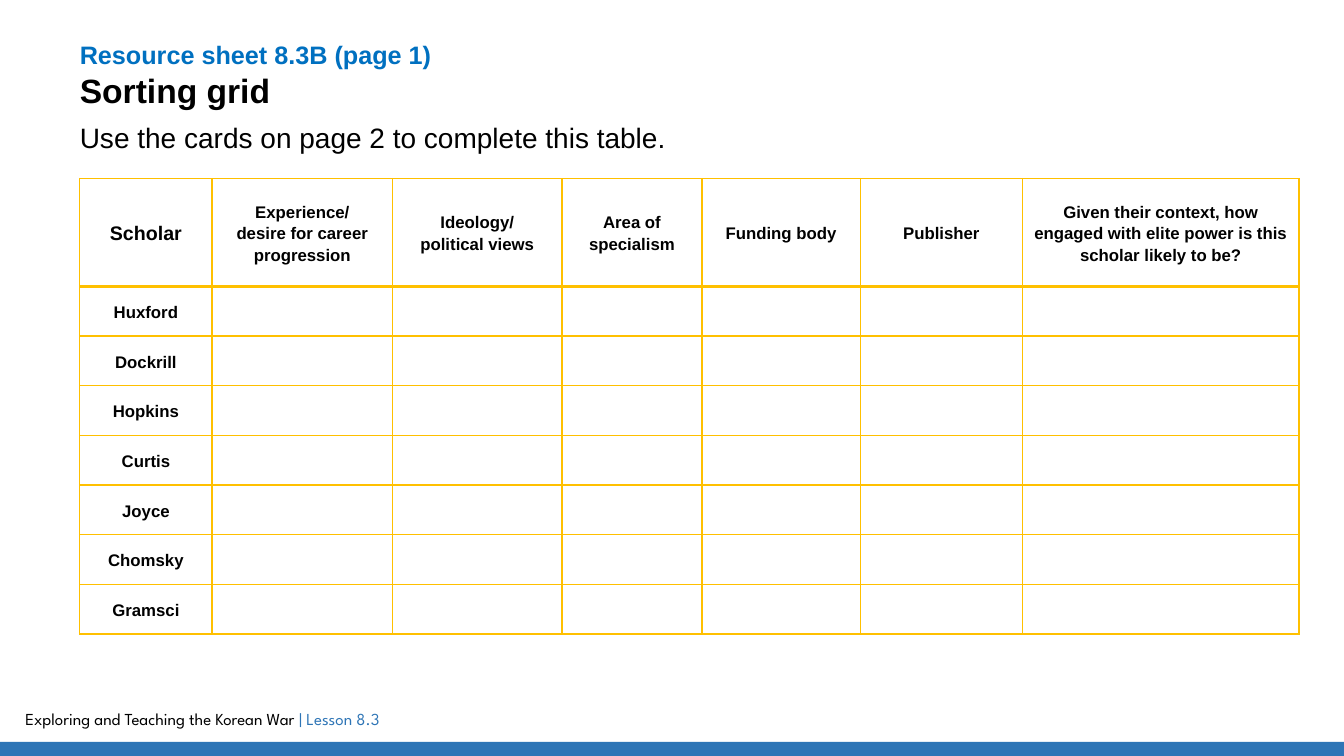
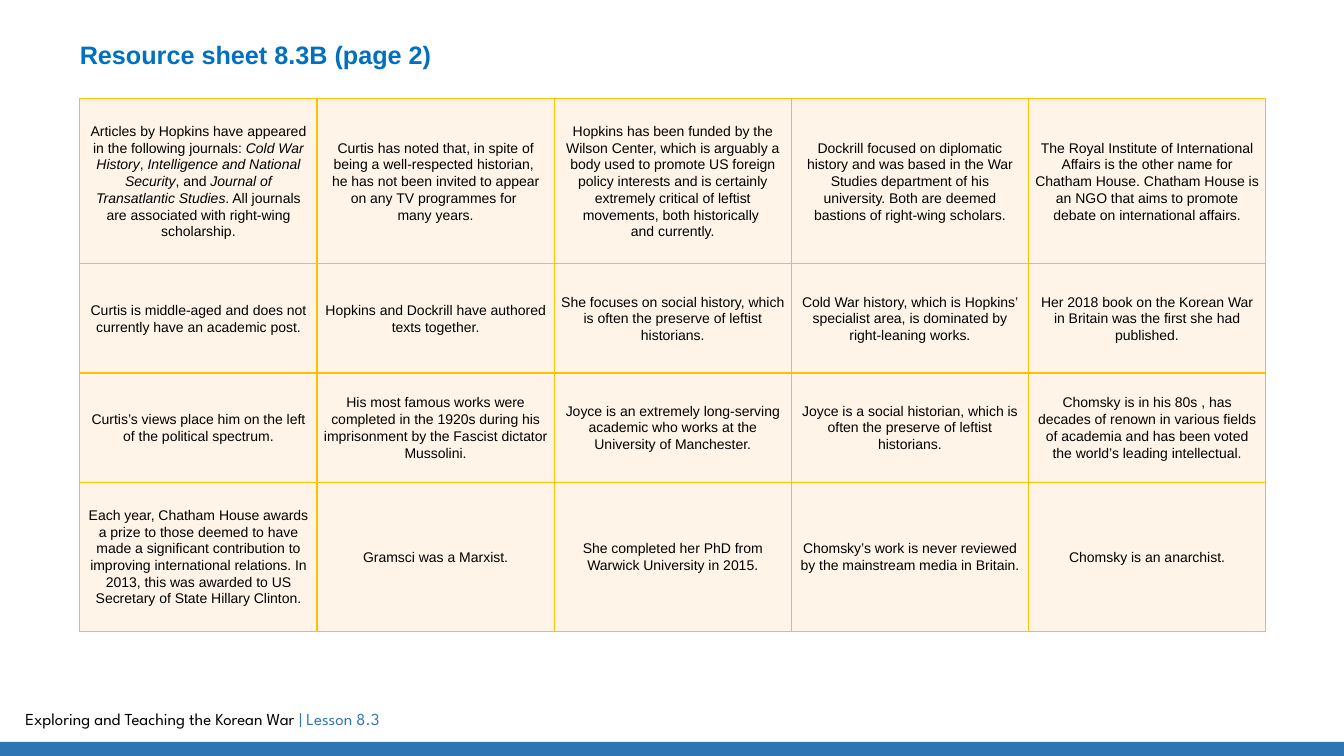
import pptx
import pptx.dml.color
import pptx.enum.shapes
import pptx.enum.text
import pptx.oxml
import pptx.oxml.ns
import pptx.util

Pt = pptx.util.Pt
ALIGN = pptx.enum.text.PP_ALIGN
ANCHOR = pptx.enum.text.MSO_ANCHOR

BLUE, BAND, BLACK, GOLD, CREAM = "0070C0", "2E75B6", "000000", "FFC000", "FFF4E7"
WIDTH, HEIGHT, MARGIN = 960, 540, 57

SHEET = {"name": "Arial", "size": 18, "bold": True, "color": BLUE}
HEADING = {**SHEET, "size": 24, "color": BLACK}
INTRO = {"name": "Arial", "size": 20, "bold": False, "color": BLACK}
LABEL = {**INTRO, "size": 12, "bold": True}
CORNER = {**LABEL, "size": 14}
CARD = {**INTRO, "size": 10}
FOOTER = {**INTRO, "name": "League Spartan", "size": 12}

GRID_COLUMNS = [94.5, 129, 121, 100, 113, 116, 197.5]
GRID_ROWS = [77] + [35.5] * 7
GRID_HEADERS = [
    "Scholar",
    "Experience/\ndesire for career progression",
    "Ideology/\npolitical views",
    "Area of specialism",
    "Funding body",
    "Publisher",
    "Given their context, how engaged with elite power is this scholar likely to be?",
]
SCHOLARS = ["Huxford", "Dockrill", "Hopkins", "Curtis", "Joyce", "Chomsky", "Gramsci"]

CARD_COLUMNS = [169.4] * 5
CARD_ROWS = [118, 78, 78, 106.5]
CARDS = [
    [
        "Articles by Hopkins have appeared in the following journals: *Cold War History*, "
        "*Intelligence and National Security*, and *Journal of Transatlantic Studies*. "
        "All journals are associated with right-wing scholarship.",
        "Curtis has noted that, in spite of being a well-respected historian, \v"
        "he has not been invited to appear on any TV programmes for \vmany years.",
        "Hopkins has been funded by the Wilson Center, which is arguably a body used to "
        "promote US foreign policy interests and is certainly extremely critical of leftist "
        "movements, both historically \vand currently.",
        "Dockrill focused on diplomatic history and was based in the War Studies department "
        "of his university. Both are deemed bastions of right-wing scholars.",
        "The Royal Institute of International Affairs is the other name for Chatham House. "
        "Chatham House is an NGO that aims to promote debate on international affairs.",
    ],
    [
        "Curtis is middle-aged and does not currently have an academic post.",
        "Hopkins and Dockrill have authored texts together.",
        "She focuses on social history, which is often the preserve of leftist historians.",
        "Cold War history, which is Hopkins’ specialist area, is dominated by "
        "right-leaning works.",
        "Her 2018 book on the Korean War in Britain was the first she had published.",
    ],
    [
        "Curtis’s views place him on the left of the political spectrum.",
        "His most famous works were completed in the 1920s during his imprisonment by the "
        "Fascist dictator Mussolini.",
        "Joyce is an extremely long-serving academic who works at the University of Manchester.",
        "Joyce is a social historian, which is often the preserve of leftist historians.",
        "Chomsky is in his 80s , has decades of renown in various fields of academia and has "
        "been voted the world’s leading intellectual.",
    ],
    [
        "Each year, Chatham House awards a prize to those deemed to have made a significant "
        "contribution to improving international relations. In 2013, this was awarded to US "
        "Secretary of State Hillary Clinton.",
        "Gramsci was a Marxist.",
        "She completed her PhD from Warwick University in 2015.",
        "Chomsky’s work is never reviewed by the mainstream media in Britain.",
        "Chomsky is an anarchist.",
    ],
]


def rgb(value):
    """Return the colour for a hex string."""
    return pptx.dml.color.RGBColor.from_string(value)


def set_format(target, values):
    """Set each attribute named in a dict of values."""
    for name, value in values.items():
        setattr(target, name, value)


def set_font(font, style):
    """Apply a text style to a font."""
    for name, value in style.items():
        if name == "color":
            font.color.rgb = rgb(value)
        else:
            setattr(font, name, Pt(value) if name == "size" else value)


def add_spans(para, text, style):
    """Write text into a paragraph, with italics between asterisks."""
    for number, part in enumerate(text.split("*")):
        for position, line in enumerate(part.split("\v")):
            if position:
                para.add_line_break()
            if line:
                span = para.add_run()
                span.text = line
                set_font(span.font, {**style, "italic": number % 2 == 1})


def set_frame(frame, inset=0):
    """Prepare a wrapping, top-anchored text frame."""
    set_format(frame, {"word_wrap": True, "vertical_anchor": ANCHOR.TOP,
                       "auto_size": pptx.enum.text.MSO_AUTO_SIZE.NONE})
    for side in ("left", "top", "right", "bottom"):
        setattr(frame, "margin_" + side, Pt(inset if side in ("top", "bottom") else inset * 2))


def place(shape, box):
    """Move and size a shape to a box in points."""
    set_format(shape, dict(zip(("left", "top", "width", "height"), map(Pt, box))))


def add_title(page, box, lines):
    """Fill the title placeholder with styled lines."""
    place(page.shapes.title, box)
    frame = page.shapes.title.text_frame
    set_frame(frame)
    for number, (text, style) in enumerate(lines):
        para = frame.add_paragraph() if number else frame.paragraphs[0]
        para.alignment = ALIGN.LEFT
        add_spans(para, text, style)


def add_intro(page, box, text):
    """Add the line of instruction."""
    frame = page.shapes.add_textbox(*map(Pt, box)).text_frame
    set_frame(frame)
    add_spans(frame.paragraphs[0], text, INTRO)


def add_footer(page, box):
    """Add the course name above a band along the foot of a box."""
    left, top, width, height = box
    frame = page.shapes.add_textbox(Pt(left + 11), Pt(top), Pt(563), Pt(36)).text_frame
    set_frame(frame, 3.6)
    para = frame.paragraphs[0]
    add_spans(para, "Exploring and Teaching the Korean War ", FOOTER)
    add_spans(para, "| Lesson 8.3", {**FOOTER, "color": BAND})
    band = page.shapes.add_shape(pptx.enum.shapes.MSO_SHAPE.RECTANGLE, Pt(left),
                                 Pt(top + height - 10), Pt(width), Pt(10))
    band.shadow.inherit = False
    band.fill.solid()
    band.fill.fore_color.rgb = rgb(BAND)
    band.line.fill.background()


def set_borders(cell, top=1, bottom=1):
    """Draw gold borders on the four sides of a cell."""
    properties = cell._tc.get_or_add_tcPr()
    for side, width in (("L", 1), ("R", 1), ("T", top), ("B", bottom)):
        properties.append(pptx.oxml.parse_xml(
            f'<a:ln{side} {pptx.oxml.ns.nsdecls("a")} w="{Pt(width)}"><a:solidFill>'
            f'<a:srgbClr val="{GOLD}"/></a:solidFill></a:ln{side}>'))


def fill_cell(cell, text, style, spacing, inset, fill):
    """Write centred text in a cell and set its fill."""
    set_format(cell, {"vertical_anchor": ANCHOR.MIDDLE, "margin_left": Pt(inset),
                      "margin_right": Pt(inset), "margin_top": 0, "margin_bottom": 0})
    for number, line in enumerate(text.split("\n")):
        frame = cell.text_frame
        para = frame.add_paragraph() if number else frame.paragraphs[0]
        set_format(para, {"alignment": ALIGN.CENTER, "line_spacing": spacing})
        add_spans(para, line, style)
    if fill:
        cell.fill.solid()
        cell.fill.fore_color.rgb = rgb(fill)
    else:
        cell.fill.background()


def add_grid(page, origin, columns, rows):
    """Add an unstyled table with the given column widths and row heights."""
    box = (*origin, sum(columns), sum(rows))
    table = page.shapes.add_table(len(rows), len(columns), *map(Pt, box)).table
    set_format(table, {"first_row": False, "horz_banding": False})
    for column, width in zip(table.columns, columns):
        column.width = Pt(width)
    for row, height in zip(table.rows, rows):
        row.height = Pt(height)
    return table


def add_sorting_grid(page, origin):
    """Add the grid of scholars to be completed."""
    table = add_grid(page, origin, GRID_COLUMNS, GRID_ROWS)
    blanks = [""] * (len(GRID_COLUMNS) - 1)
    contents = [GRID_HEADERS] + [[name] + blanks for name in SCHOLARS]
    for r, texts in enumerate(contents):
        for c, text in enumerate(texts):
            cell = table.cell(r, c)
            set_borders(cell, top=2 if r == 1 else 1, bottom=2 if r == 0 else 1)
            fill_cell(cell, text, LABEL if r or c else CORNER, 1.15, 3.6, None)


def add_cards(page, origin):
    """Add the table of cards to be sorted."""
    table = add_grid(page, origin, CARD_COLUMNS, CARD_ROWS)
    for r, texts in enumerate(CARDS):
        for c, text in enumerate(texts):
            set_borders(table.cell(r, c))
            fill_cell(table.cell(r, c), text, CARD, 1.07, 5, CREAM)


def add_page(deck, number, height, extra=()):
    """Add a page with its title and footer."""
    page = deck.slides.add_slide(deck.slide_layouts[5])
    add_footer(page, (0, 503, WIDTH, HEIGHT - 503))
    lines = [(f"Resource sheet 8.3B (page {number})", SHEET), *extra]
    add_title(page, (MARGIN, 28, 453, height), lines)
    return page


def main():
    """Build and save the deck."""
    deck = pptx.Presentation()
    set_format(deck, {"slide_width": Pt(WIDTH), "slide_height": Pt(HEIGHT)})
    page = add_page(deck, 1, 51, [("Sorting grid", HEADING)])
    add_intro(page, (MARGIN, 86, 465, 28), "Use the cards on page 2 to complete this table.")
    add_sorting_grid(page, (MARGIN, 127.5))
    page = add_page(deck, 2, 22)
    add_cards(page, (MARGIN, 70.5))
    deck.save("out.pptx")


if __name__ == "__main__":
    main()
